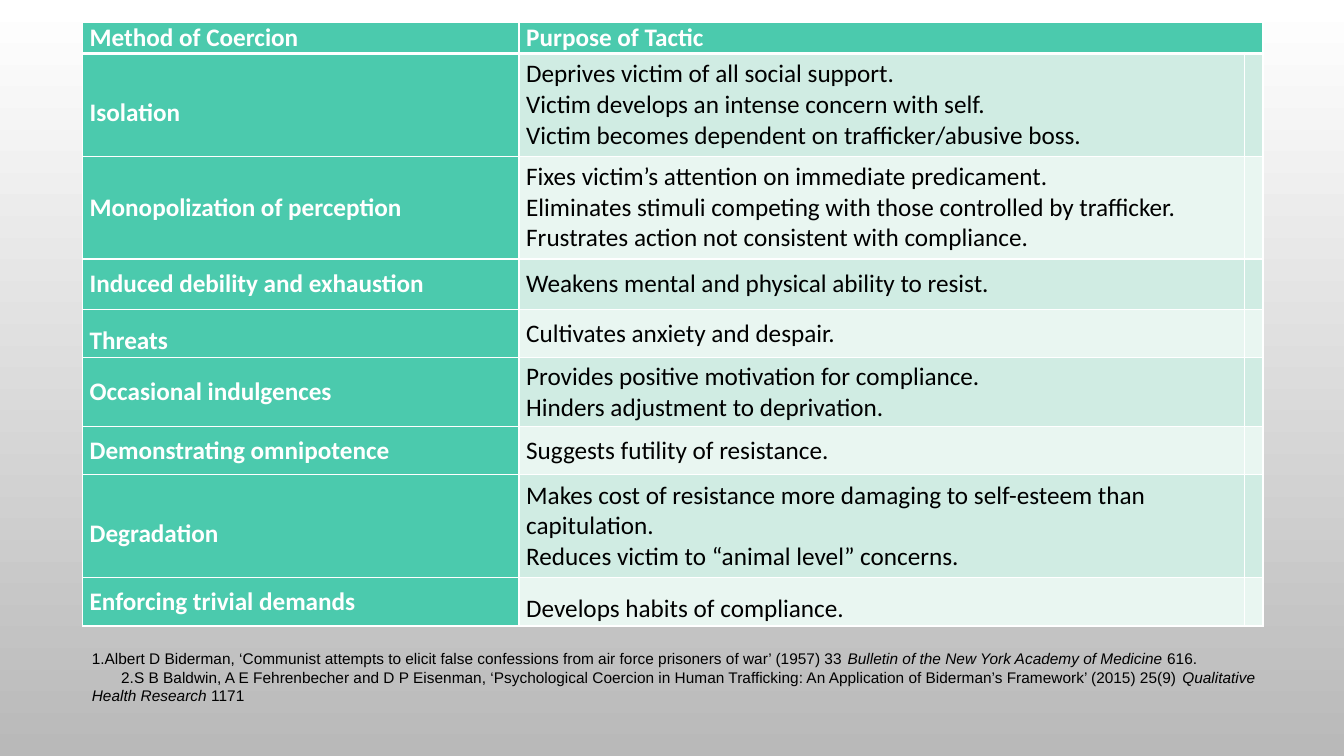
"""Builds the slide on methods of coercion and their purposes."""
from dataclasses import dataclass

from lxml import etree
from pptx import Presentation
from pptx.dml.color import RGBColor
from pptx.enum.text import MSO_ANCHOR, MSO_AUTO_SIZE
from pptx.oxml.ns import qn
from pptx.util import Cm, Pt

TOP, MIDDLE = MSO_ANCHOR.TOP, MSO_ANCHOR.MIDDLE
NO_FIT = MSO_AUTO_SIZE.NONE


@dataclass(frozen=True)
class Theme:
    accent: str = "4BCAAD"
    bands: tuple = ("D0ECE3", "E9F6F1")
    light: str = "FFFFFF"
    dark: str = "000000"
    shade: str = "B9B9B9"
    table_font: str = "Calibri"
    note_font: str = "Arial"
    table_size: int = 18
    note_size: int = 11
    rule: int = 1
    header_rule: int = 3


HEADER = ("Method of Coercion", "Purpose of Tactic")
HEADER_HEIGHT = 0.72
COL_WIDTHS = (11, 18.29, 0.41)
LOOSE = 1.5
LOOSE_CELLS = {"Isolation", "Threats", "Degradation", "Develops habits of compliance."}
TOP_CELLS = {*HEADER, "Develops habits of compliance."}

TACTICS = [
    ("Isolation", 2.59, [
        "Deprives victim of all social support.",
        "Victim develops an intense concern with self.",
        "Victim becomes dependent on trafficker/abusive boss."]),
    ("Monopolization of perception", 2.59, [
        "Fixes victim’s attention on immediate predicament.",
        "Eliminates stimuli competing with those controlled by trafficker.",
        "Frustrates action not consistent with compliance."]),
    ("Induced debility and exhaustion", 1.27, [
        "Weakens mental and physical ability to resist."]),
    ("Threats", 1.22, ["Cultivates anxiety and despair."]),
    ("Occasional indulgences", 1.73, [
        "Provides positive motivation for compliance.",
        "Hinders adjustment to deprivation."]),
    ("Demonstrating omnipotence", 1.22, ["Suggests futility of resistance."]),
    ("Degradation", 2.59, [
        "Makes cost of resistance more damaging to self-esteem than capitulation.",
        "Reduces victim to “animal level” concerns."]),
    ("Enforcing trivial demands", 1.22, ["Develops habits of compliance."]),
]

REFERENCES = [
    (-0.74, "Albert D Biderman, ‘Communist attempts to elicit false confessions "
            "from air force prisoners of war’ (1957) 33 ",
     "Bulletin of the New York Academy of Medicine ", "616."),
    (0.74, "S B Baldwin, A E Fehrenbecher and D P Eisenman, ‘Psychological Coercion "
           "in Human Trafficking: An Application of Biderman’s Framework’ (2015) 25(9) ",
     "Qualitative Health Research ", "1171"),
]


class Deck:
    def __init__(self, prs, theme):
        self.theme = theme
        self.s = prs.slides.add_slide(prs.slide_layouts[1])
        title = self.s.shapes.title
        title.element.getparent().remove(title.element)

    def background(self):
        fill = self.s.background.fill
        fill.gradient()
        fill.gradient_angle = 270
        for stop, color in zip(fill.gradient_stops, (self.theme.light, self.theme.shade)):
            stop.color.rgb = RGBColor.from_string(color)

    def run(self, p, text, color, **formats):
        r = p.add_run()
        r.text = text
        for name, value in formats.items():
            setattr(r.font, name, value)
        r.font.color.rgb = RGBColor.from_string(color)

    def borders(self, cell, top, bottom):
        tc_pr = cell._tc.get_or_add_tcPr()
        widths = {"lnL": self.theme.rule, "lnR": self.theme.rule, "lnT": top, "lnB": bottom}
        for side, width in widths.items():
            ln = etree.SubElement(tc_pr, qn(f"a:{side}"), w=str(Pt(width)))
            fill = etree.SubElement(ln, qn("a:solidFill"))
            etree.SubElement(fill, qn("a:srgbClr"), val=self.theme.light)

    def cell(self, cell, lines, fill, color, bold, top, bottom):
        self.borders(cell, top, bottom)
        cell.fill.solid()
        cell.fill.fore_color.rgb = RGBColor.from_string(fill)
        anchor = TOP if TOP_CELLS.intersection(lines) else MIDDLE
        formats = {"margin_left": Cm(0.18), "margin_right": Cm(0.18), "margin_top": 0,
                   "margin_bottom": 0, "vertical_anchor": anchor}
        for name, value in formats.items():
            setattr(cell, name, value)
        tf = cell.text_frame
        for i, line in enumerate(lines):
            p = tf.add_paragraph() if i else tf.paragraphs[0]
            if line in LOOSE_CELLS:
                p.line_spacing = LOOSE
            self.run(p, line, color, name=self.theme.table_font,
                     size=Pt(self.theme.table_size), bold=bold)

    def table(self, left, top):
        t = self.theme
        heights = [HEADER_HEIGHT] + [height for _, height, _ in TACTICS]
        rows = [[[text] for text in HEADER] + [[]]]
        rows += [[[method], purposes, []] for method, _, purposes in TACTICS]
        table = self.s.shapes.add_table(
            len(rows), len(COL_WIDTHS), Cm(left), Cm(top),
            Cm(sum(COL_WIDTHS)), Cm(sum(heights))).table
        table.horz_banding = False
        for column, width in zip(table.columns, COL_WIDTHS):
            column.width = Cm(width)
        for i, (row, height) in enumerate(zip(rows, heights)):
            table.rows[i].height = Cm(height)
            for j, lines in enumerate(row):
                strong = i == 0 or j == 0
                self.cell(table.cell(i, j), lines,
                          fill=t.accent if strong else t.bands[(i - 1) % 2],
                          color=t.light if strong else t.dark, bold=strong,
                          top=t.header_rule if i == 1 else t.rule,
                          bottom=t.header_rule if i == 0 else t.rule)
        table.cell(0, 1).merge(table.cell(0, 2))

    def number(self, p, indent):
        p_pr = p._p.get_or_add_pPr()
        p_pr.set("marL", "0")
        p_pr.set("indent", str(Cm(indent)))
        color = etree.SubElement(p_pr, qn("a:buClr"))
        etree.SubElement(color, qn("a:srgbClr"), val=self.theme.dark)
        etree.SubElement(p_pr, qn("a:buFont"), typeface=self.theme.note_font)
        etree.SubElement(p_pr, qn("a:buAutoNum"), type="arabicPeriod")

    def references(self, left, top, width, height):
        sp = self.s.placeholders[1]
        box = {"left": left, "top": top, "width": width, "height": height}
        for name, value in box.items():
            setattr(sp, name, Cm(value))
        tf = sp.text_frame
        tf.auto_size = NO_FIT
        tf.vertical_anchor = TOP
        for i, (indent, *parts) in enumerate(REFERENCES):
            p = tf.add_paragraph() if i else tf.paragraphs[0]
            self.number(p, indent)
            p.space_before = Pt(0)
            for k, text in enumerate(parts):
                self.run(p, text, self.theme.dark, name=self.theme.note_font,
                         size=Pt(self.theme.note_size), italic=k == 1)


def main():
    prs = Presentation()
    prs.slide_width, prs.slide_height = Cm(33.87), Cm(19.05)
    deck = Deck(prs, Theme())
    deck.background()
    deck.table(2.08, 0.57)
    deck.references(2.06, 16.23, 30.56, 2.24)
    prs.save("out.pptx")


if __name__ == "__main__":
    main()
